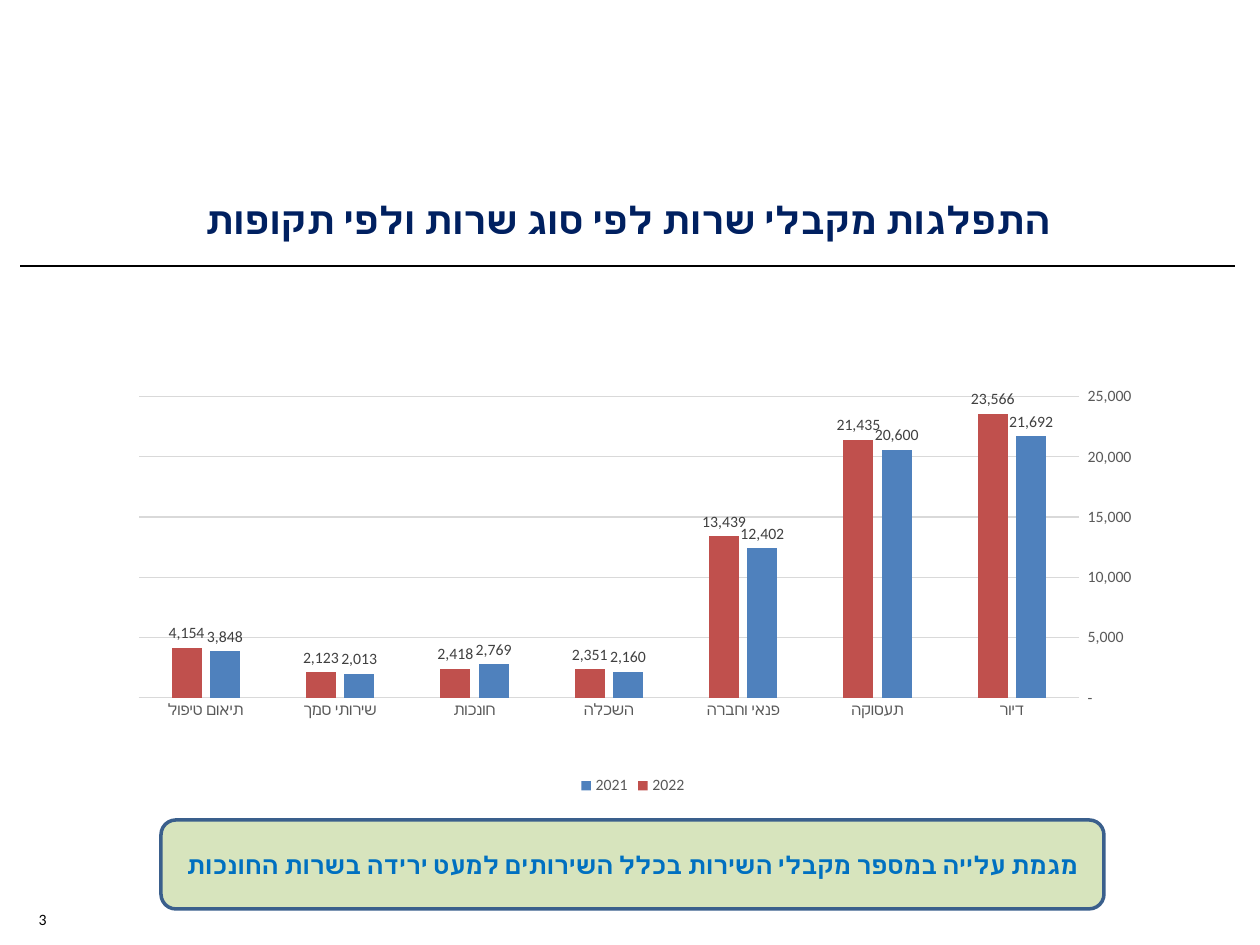
from dataclasses import dataclass

from lxml import etree
from pptx import Presentation
from pptx import util as u
from pptx.chart.data import CategoryChartData
from pptx.dml.color import RGBColor
from pptx.enum import chart as charts
from pptx.enum import shapes, text
from pptx.oxml import ns

PX = 914400 / 126


@dataclass(frozen=True)
class Theme:
    font: str = "Calibri"
    title: str = "002060"
    message: str = "0070C0"
    message_fill: str = "D7E4BD"
    message_line: str = "3A5F8C"
    ink: str = "000000"
    axis_text: str = "595959"
    label_text: str = "404040"
    grid: str = "D9D9D9"
    title_size: float = 21.6
    message_size: float = 14
    small_size: float = 9
    chart_size: float = 10


@dataclass(frozen=True)
class Area:
    left: int
    top: int
    width: int
    height: int

    def emu(self) -> list[u.Emu]:
        return [px(n) for n in (self.left, self.top, self.width, self.height)]


@dataclass(frozen=True)
class Year:
    name: str
    color: str
    recipients: tuple[int, ...]


THEME = Theme()
TITLE_AREA = Area(30, 189, 1196, 60)
CHART_AREA = Area(30, 314, 1206, 486)
MESSAGE_AREA = Area(161, 820, 943, 89)
NUMBER_AREA = Area(10, 903, 49, 32)
PLOT_LAYOUT = {"x": 0.09, "y": 0.17, "w": 0.78, "h": 0.62}
NUMBER_FORMAT = r'_ * #,##0_ ;_ * \-#,##0_ ;_ * "-"??_ ;_ '
SERVICES = ("דיור", "תעסוקה", "פנאי וחברה", "השכלה", "חונכות",
            "שירותי סמך", "תיאום טיפול")
YEARS = (
    Year("2021", "4F81BD", (21692, 20600, 12402, 2160, 2769, 2013, 3848)),
    Year("2022", "C0504D", (23566, 21435, 13439, 2351, 2418, 2123, 4154)),
)


def px(count: int) -> u.Emu:
    return u.Emu(round(count * PX))


def rgb(color: str) -> RGBColor:
    return RGBColor.from_string(color)


def set_font(font, size: float, color: str, bold: bool = False) -> None:
    font.name = THEME.font
    font.size = u.Pt(size)
    font.bold = bold
    font.color.rgb = rgb(color)


def set_line(line, color: str, width: float) -> None:
    line.color.rgb = rgb(color)
    line.width = u.Pt(width)


def write(shape, words: str, size: float, color: str, align, bold=False) -> None:
    """Put one right-to-left paragraph in the middle of the shape."""
    frame = shape.text_frame
    frame.word_wrap = True
    frame.auto_size = text.MSO_AUTO_SIZE.NONE
    frame.vertical_anchor = text.MSO_ANCHOR.MIDDLE
    para = frame.paragraphs[0]
    para.alignment = align
    para._p.get_or_add_pPr().set("rtl", "1")
    span = para.add_run()
    span.text = words
    set_font(span.font, size, color, bold)
    complex_font = etree.SubElement(span._r.get_or_add_rPr(), ns.qn("a:cs"))
    complex_font.set("typeface", THEME.font)


def add_title(page) -> None:
    title = page.shapes.title
    title.left, title.top, title.width, title.height = TITLE_AREA.emu()
    write(title, "התפלגות מקבלי שרות לפי סוג שרות ולפי תקופות",
          THEME.title_size, THEME.title, text.PP_ALIGN.CENTER, bold=True)


def add_rule(page) -> None:
    rule = page.shapes.add_connector(
        shapes.MSO_CONNECTOR.STRAIGHT, px(1235), px(266), px(20), px(266))
    set_line(rule.line, THEME.ink, 0.75)
    etree.SubElement(rule._element.spPr, ns.qn("a:effectLst"))


def add_page_number(page) -> None:
    box = page.shapes.add_textbox(*NUMBER_AREA.emu())
    write(box, "3", THEME.small_size, THEME.ink, text.PP_ALIGN.RIGHT)


def place_plot(chart) -> None:
    """Fix the inner plot area as fractions of the chart."""
    plot_area = chart._chartSpace.chart.plotArea
    for old in plot_area.findall(ns.qn("c:layout")):
        plot_area.remove(old)
    layout = etree.Element(ns.qn("c:layout"))
    manual = etree.SubElement(layout, ns.qn("c:manualLayout"))
    settings = {"layoutTarget": "inner", "xMode": "edge", "yMode": "edge", **PLOT_LAYOUT}
    for name, value in settings.items():
        etree.SubElement(manual, ns.qn(f"c:{name}")).set("val", str(value))
    plot_area.insert(0, layout)


def format_axes(chart) -> None:
    category, value = chart.category_axis, chart.value_axis
    for axis in (category, value):
        axis.major_tick_mark = axis.minor_tick_mark = charts.XL_TICK_MARK.NONE
        set_font(axis.tick_labels.font, THEME.small_size, THEME.axis_text)
    category.reverse_order = True
    set_line(category.format.line, THEME.grid, 0.75)
    value.minimum_scale, value.maximum_scale, value.major_unit = 0, 25000, 5000
    value.format.line.fill.background()
    value.has_major_gridlines = True
    set_line(value.major_gridlines.format.line, THEME.grid, 0.75)
    value.tick_labels.number_format = NUMBER_FORMAT
    value.tick_labels.number_format_is_linked = False


def format_series(series, year: Year) -> None:
    series.format.fill.solid()
    series.format.fill.fore_color.rgb = rgb(year.color)
    labels = series.data_labels
    labels.show_value = True
    labels.position = charts.XL_LABEL_POSITION.OUTSIDE_END
    labels.number_format = NUMBER_FORMAT
    labels.number_format_is_linked = False
    set_font(labels.font, THEME.small_size, THEME.label_text)


def add_service_chart(page) -> None:
    data = CategoryChartData(number_format=NUMBER_FORMAT)
    data.categories = SERVICES
    for year in YEARS:
        data.add_series(year.name, year.recipients)
    chart = page.shapes.add_chart(
        charts.XL_CHART_TYPE.COLUMN_CLUSTERED, *CHART_AREA.emu(), data).chart
    set_font(chart.font, THEME.chart_size, THEME.ink)
    chart.has_title = False
    chart.has_legend = True
    chart.legend.position = charts.XL_LEGEND_POSITION.BOTTOM
    chart.legend.include_in_layout = False
    set_font(chart.legend.font, THEME.small_size, THEME.axis_text)
    plot = chart.plots[0]
    plot.vary_by_categories = False
    plot.gap_width, plot.overlap = 219, -27
    for series, year in zip(plot.series, YEARS):
        format_series(series, year)
    format_axes(chart)
    place_plot(chart)


def add_message(page) -> None:
    box = page.shapes.add_shape(shapes.MSO_SHAPE.ROUNDED_RECTANGLE, *MESSAGE_AREA.emu())
    box.shadow.inherit = False
    box.fill.solid()
    box.fill.fore_color.rgb = rgb(THEME.message_fill)
    set_line(box.line, THEME.message_line, 2)
    write(box, "מגמת עלייה במספר מקבלי השירות בכלל השירותים למעט ירידה בשרות החונכות",
          THEME.message_size, THEME.message, text.PP_ALIGN.CENTER, bold=True)


def main() -> None:
    deck = Presentation()
    deck.slide_width, deck.slide_height = px(1260), px(945)
    page = deck.slides.add_slide(deck.slide_layouts[5])
    add_rule(page)
    add_page_number(page)
    add_title(page)
    add_service_chart(page)
    add_message(page)
    deck.save("out.pptx")


if __name__ == "__main__":
    main()
